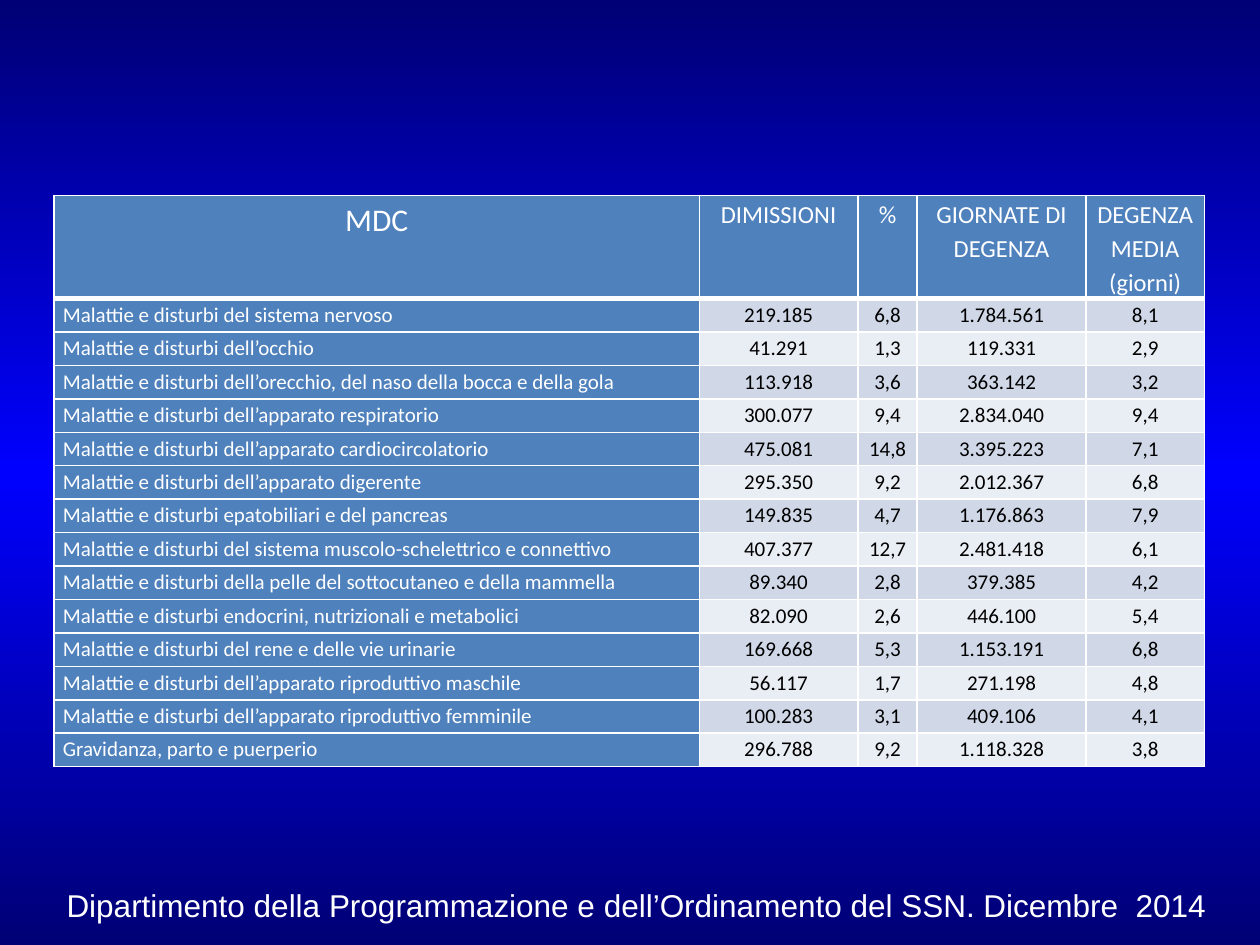
from copy import deepcopy
from pptx import Presentation
from pptx.dml.color import RGBColor
from pptx.enum.text import MSO_AUTO_SIZE, PP_ALIGN
from pptx.oxml.ns import qn
from pptx.oxml import parse_xml
from pptx.util import Inches, Pt

MID, JUST = PP_ALIGN.CENTER, PP_ALIGN.JUSTIFY
GROW = MSO_AUTO_SIZE.SHAPE_TO_FIT_TEXT
NS = "http://schemas.openxmlformats.org/drawingml/2006/main"
WHITE, BLACK, STEEL = "FFFFFF", "000000", "4F81BD"
BANDS = ["D0D8E8", "E9EDF4"]
HEAD = ["MDC", "DIMISSIONI", "%", "GIORNATE DI DEGENZA", "DEGENZA MEDIA (giorni)"]
DATA = [
    ["Malattie e disturbi del sistema nervoso", "219.185", "6,8", "1.784.561", "8,1"],
    ["Malattie e disturbi dell’occhio", "41.291", "1,3", "119.331", "2,9"],
    ["Malattie e disturbi dell’orecchio, del naso della bocca e della gola", "113.918", "3,6", "363.142", "3,2"],
    ["Malattie e disturbi dell’apparato respiratorio", "300.077", "9,4", "2.834.040", "9,4"],
    ["Malattie e disturbi dell’apparato cardiocircolatorio", "475.081", "14,8", "3.395.223", "7,1"],
    ["Malattie e disturbi dell’apparato digerente", "295.350", "9,2", "2.012.367", "6,8"],
    ["Malattie e disturbi epatobiliari e del pancreas", "149.835", "4,7", "1.176.863", "7,9"],
    ["Malattie e disturbi del sistema muscolo-schelettrico e connettivo", "407.377", "12,7", "2.481.418", "6,1"],
    ["Malattie e disturbi della pelle del sottocutaneo e della mammella", "89.340", "2,8", "379.385", "4,2"],
    ["Malattie e disturbi endocrini, nutrizionali e metabolici", "82.090", "2,6", "446.100", "5,4"],
    ["Malattie e disturbi del rene e delle vie urinarie", "169.668", "5,3", "1.153.191", "6,8"],
    ["Malattie e disturbi dell’apparato riproduttivo maschile", "56.117", "1,7", "271.198", "4,8"],
    ["Malattie e disturbi dell’apparato riproduttivo femminile", "100.283", "3,1", "409.106", "4,1"],
    ["Gravidanza, parto e puerperio", "296.788", "9,2", "1.118.328", "3,8"],
]


def hue(code):
    return RGBColor.from_string(code)


def write(frame, text, face, size, code):
    line = frame.paragraphs[0]
    run = line.add_run()
    run.text = text
    run.font.color.rgb = hue(code)
    for key, val in {"name": face, "size": Pt(size)}.items():
        setattr(run.font, key, val)
    return line


deck = Presentation()
deck.slide_width, deck.slide_height = Inches(10), Inches(7.5)
slide = deck.slides.add_slide(deck.slide_layouts[6])

back = slide.background.fill
back.gradient()
back.gradient_angle = 90
stops = next(slide.element.iter(qn("a:gsLst")))
stops.insert(1, deepcopy(stops[0]))
for stop, place, code in zip(back.gradient_stops, [0, 0.5, 1], ["000075", "0000FF", "000075"]):
    stop.position = place
    stop.color.rgb = hue(code)

left, top = Inches(0.43), Inches(1.55)
cols = [Inches(w) for w in (5.12, 1.26, 0.47, 1.34, 0.94)]
rows = [Inches(0.82)] + [Inches(3.72 / len(DATA))] * len(DATA)
grid = slide.shapes.add_table(len(rows), len(cols), left, top, sum(cols), sum(rows)).table
for col, wide in zip(grid.columns, cols):
    col.width = wide
for row, high in zip(grid.rows, rows):
    row.height = high

pads = {"margin_left": Inches(0.07), "margin_right": Inches(0.07), "margin_top": 0, "margin_bottom": 0}
for r, texts in enumerate([HEAD] + DATA):
    for c, text in enumerate(texts):
        cell = grid.cell(r, c)
        for key, val in pads.items():
            setattr(cell, key, val)
        for side in "LRTB":
            thick = Pt(3 if r == 0 and side == "B" else 1)
            cell._tc.get_or_add_tcPr().append(parse_xml(
                f'<a:ln{side} xmlns:a="{NS}" w="{thick}"><a:solidFill>'
                f'<a:srgbClr val="{WHITE}"/></a:solidFill></a:ln{side}>'))
        label = r == 0 or c == 0
        cell.fill.solid()
        cell.fill.fore_color.rgb = hue(STEEL if label else BANDS[(r - 1) % 2])
        size = 12 if r else 14 if c else 18
        line = write(cell.text_frame, text, "Calibri", size, WHITE if label else BLACK)
        line.font.bold = line.runs[0].font.bold = False
        line.alignment = JUST if r and c == 0 else MID
        line.line_spacing = 1.15

note = slide.shapes.add_textbox(left, Inches(6.98), Inches(9.26), Inches(0.4)).text_frame
for key, val in {"word_wrap": False, "auto_size": GROW}.items():
    setattr(note, key, val)
write(note, "Dipartimento della Programmazione e dell’Ordinamento del SSN. Dicembre  2014", "Arial", 18, WHITE)

deck.save("out.pptx")
